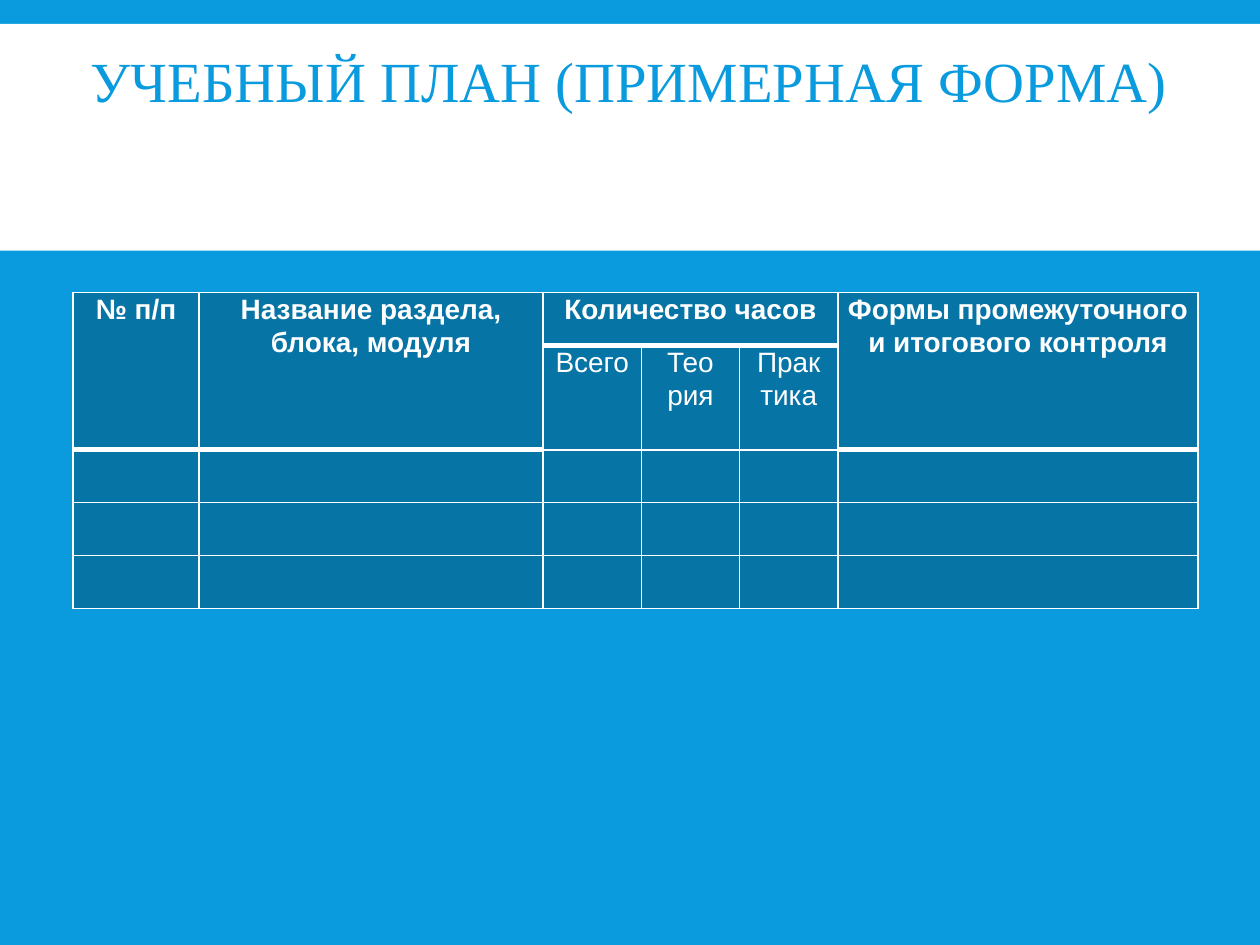
from dataclasses import dataclass

from lxml.etree import SubElement
from pptx import Presentation
from pptx.dml.color import RGBColor
from pptx.enum.shapes import MSO_SHAPE
from pptx.enum.text import MSO_ANCHOR, PP_ALIGN
from pptx.oxml.ns import qn
from pptx.util import Inches, Pt


@dataclass(frozen=True)
class Theme:
    blue: str = "099BDD"
    cell: str = "0774A6"
    white: str = "FFFFFF"
    title_font: str = "Times New Roman"
    table_font: str = "Arial"
    title_size: float = 32.4
    table_size: float = 16
    thin: float = 1
    thick: float = 3


THEME = Theme()
COLUMN_WIDTHS = [1, 2.73, 0.78, 0.78, 0.78, 2.86]
ROW_HEIGHTS = [0.42, 0.83, 0.42, 0.42, 0.42]
TALL_HEADERS = {
    0: "№ п/п",
    1: "Название раздела, блока, модуля",
    5: "Формы промежуточного и итогового контроля",
}
HOURS_HEADER = "Количество часов"
HOURS_COLUMNS = {2: "Всего", 3: "Тео\nрия", 4: "Прак\nтика"}


def color(value):
    return RGBColor.from_string(value)


def format_text(frame, font_name, size, text_color, spacing, bold=False):
    for paragraph in frame.paragraphs:
        paragraph.alignment = PP_ALIGN.CENTER
        paragraph.line_spacing = spacing
        for run in paragraph.runs:
            run.font.name = font_name
            run.font.size = Pt(size)
            run.font.bold = bold
            run.font.color.rgb = color(text_color)


def add_title(slide):
    title = slide.shapes.title
    title.left, title.top = Inches(0.05), Inches(0.33)
    title.width, title.height = Inches(9.98), Inches(1.15)
    frame = title.text_frame
    frame.text = "УЧЕБНЫЙ ПЛАН (ПРИМЕРНАЯ ФОРМА)"
    frame.word_wrap = True
    frame.vertical_anchor = MSO_ANCHOR.TOP
    frame.margin_top = Inches(0.12)
    frame.margin_left, frame.margin_right = Inches(0.1), Inches(0.2)
    format_text(frame, THEME.title_font, THEME.title_size, THEME.blue, 0.85)


def add_title_band(slide):
    band = slide.shapes.add_shape(
        MSO_SHAPE.RECTANGLE, 0, Inches(0.19), Inches(10), Inches(1.8)
    )
    band.shadow.inherit = False
    band.fill.solid()
    band.fill.fore_color.rgb = color(THEME.white)
    band.line.fill.background()
    slide.shapes.title.element.addprevious(band.element)


def set_borders(cell, top, bottom):
    properties = cell._tc.get_or_add_tcPr()
    widths = {"L": THEME.thin, "R": THEME.thin, "T": top, "B": bottom}
    for side, width in widths.items():
        border = SubElement(properties, qn(f"a:ln{side}"), w=str(Pt(width)))
        fill = SubElement(border, qn("a:solidFill"))
        SubElement(fill, qn("a:srgbClr"), val=THEME.white)


def style_cell(cell, row, column):
    header_end = 1 if column in TALL_HEADERS else 0
    top = THEME.thick if row == header_end + 1 else THEME.thin
    bottom = THEME.thick if row in (0, header_end) else THEME.thin
    set_borders(cell, top, bottom)
    cell.fill.solid()
    cell.fill.fore_color.rgb = color(THEME.cell)


def write_header(cell, text, bold):
    cell.margin_left = cell.margin_right = Inches(0.07)
    cell.margin_top = cell.margin_bottom = 0
    cell.text_frame.text = text
    format_text(
        cell.text_frame, THEME.table_font, THEME.table_size, THEME.white, 1.07, bold
    )


def add_plan_table(slide):
    plan = slide.shapes.add_table(
        len(ROW_HEIGHTS), len(COLUMN_WIDTHS), Inches(0.58), Inches(2.32),
        Inches(sum(COLUMN_WIDTHS)), Inches(sum(ROW_HEIGHTS)),
    ).table
    for column, width in zip(plan.columns, COLUMN_WIDTHS):
        column.width = Inches(width)
    for row, height in zip(plan.rows, ROW_HEIGHTS):
        row.height = Inches(height)
    for row in range(len(ROW_HEIGHTS)):
        for column in range(len(COLUMN_WIDTHS)):
            style_cell(plan.cell(row, column), row, column)

    for column, text in TALL_HEADERS.items():
        plan.cell(0, column).merge(plan.cell(1, column))
        write_header(plan.cell(0, column), text, True)
    plan.cell(0, min(HOURS_COLUMNS)).merge(plan.cell(0, max(HOURS_COLUMNS)))
    write_header(plan.cell(0, min(HOURS_COLUMNS)), HOURS_HEADER, True)
    for column, text in HOURS_COLUMNS.items():
        write_header(plan.cell(1, column), text, False)


def main():
    deck = Presentation()
    deck.slide_width, deck.slide_height = Inches(10), Inches(7.5)
    slide = deck.slides.add_slide(deck.slide_layouts.get_by_name("Title Only"))
    slide.background.fill.solid()
    slide.background.fill.fore_color.rgb = color(THEME.blue)
    add_title_band(slide)
    add_title(slide)
    add_plan_table(slide)
    deck.save("out.pptx")


if __name__ == "__main__":
    main()
